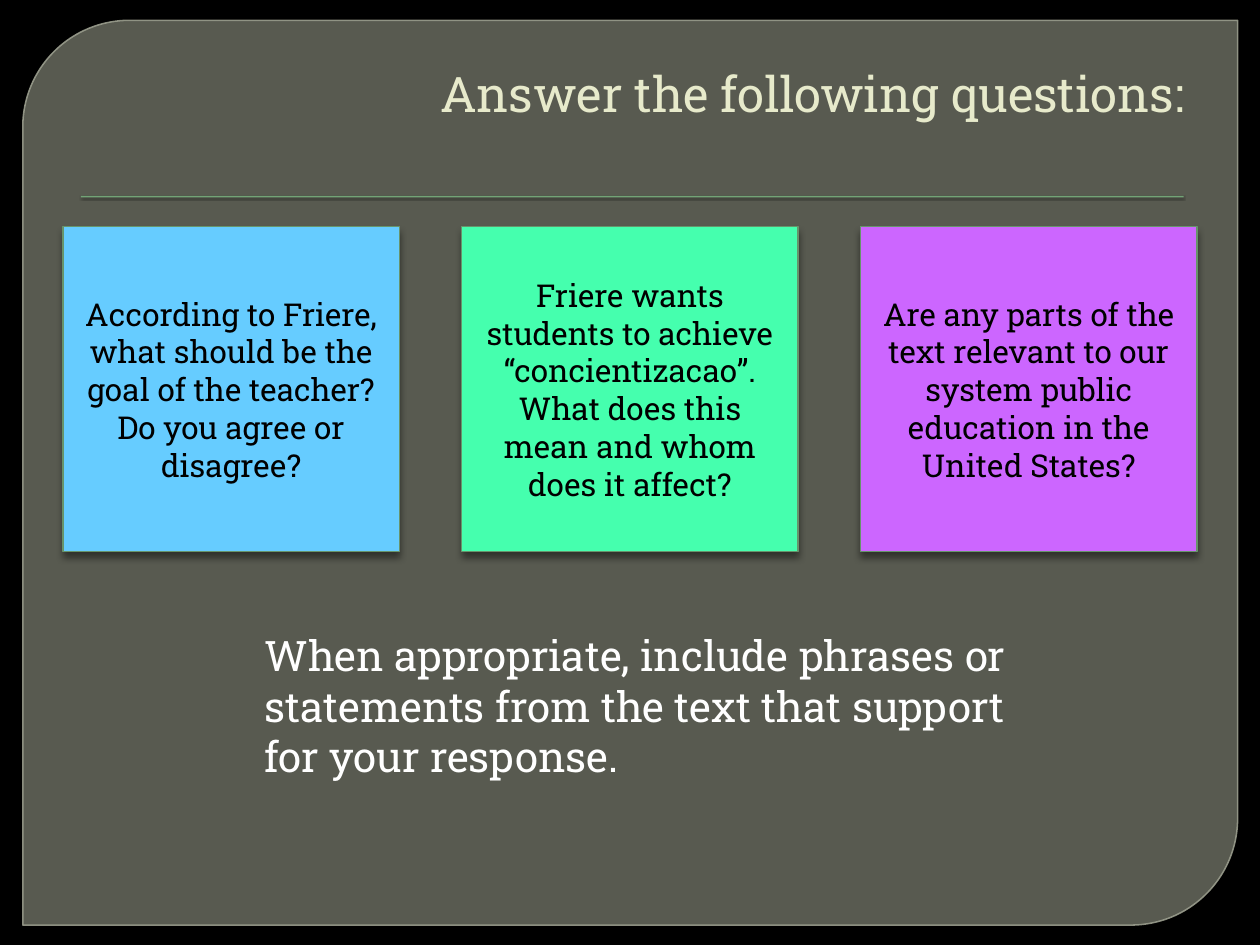
from dataclasses import dataclass
from typing import Optional

from lxml.etree import SubElement
from pptx import Presentation
from pptx.dml.color import RGBColor
from pptx.enum.shapes import MSO_SHAPE as Preset
from pptx.enum.text import MSO_ANCHOR as Anchor, PP_ALIGN as Align
from pptx.oxml.ns import qn
from pptx.util import Cm, Pt

FONT = "Roboto Slab"
CARD_LEFT, CARD_STEP = 1.27, 8.04


@dataclass
class Shadow:
    alpha: int
    blur: float
    distance: float


@dataclass
class Card:
    question: str
    fill: str


CARD_SHADOW = Shadow(43, 4, 3)
CARDS = [
    Card("According to Friere, what should be the goal of the teacher? "
         "Do you agree or disagree?", "66CCFF"),
    Card("Friere wants students to achieve “concientizacao”. "
         "What does this mean and whom does it affect?", "45FFAE"),
    Card("Are any parts of the text relevant to our system public "
         "education in the United States?", "CC66FF"),
]


def color(value: str) -> RGBColor:
    return RGBColor.from_string(value)


def set_values(target, values: dict) -> None:
    for name, value in values.items():
        setattr(target, name, value)


def set_alpha(holder, percent: int) -> None:
    for shade in holder.iter(qn("a:srgbClr")):
        SubElement(shade, qn("a:alpha"), val=str(percent * 1000))


def add_shadow(shape, shadow: Shadow) -> None:
    effects = shape.element.spPr.find(qn("a:effectLst"))
    outer = SubElement(effects, qn("a:outerShdw"), blurRad=str(Pt(shadow.blur)),
                       dist=str(Pt(shadow.distance)), dir="5400000",
                       rotWithShape="0")
    SubElement(outer, qn("a:srgbClr"), val="000000")
    set_alpha(outer, shadow.alpha)


def add_panel(page, preset, area: tuple, fill: str, line: Optional[str] = None,
              width: float = 0.75, shadow: Optional[Shadow] = None):
    panel = page.shapes.add_shape(preset, *map(Cm, area))
    panel.shadow.inherit = False
    panel.fill.solid()
    panel.fill.fore_color.rgb = color(fill)
    if line:
        panel.line.color.rgb = color(line)
        panel.line.width = Pt(width)
    else:
        panel.line.fill.background()
    if shadow:
        add_shadow(panel, shadow)
    return panel


def write(box, text: str, size: int, ink: str, align, anchor) -> None:
    frame = box.text_frame
    set_values(frame, {"word_wrap": True, "vertical_anchor": anchor})
    para = frame.paragraphs[0]
    para.alignment = align
    span = para.add_run()
    span.text = text
    set_values(span.font, {"name": FONT, "size": Pt(size), "bold": False})
    span.font.color.rgb = color(ink)


def add_backdrop(page) -> None:
    page.background.fill.solid()
    page.background.fill.fore_color.rgb = color("000000")
    frame = add_panel(page, Preset.ROUND_2_DIAG_RECTANGLE,
                      (0.46, 0.41, 24.49, 18.24), "888B7B", "9DA090", 0.87)
    frame.adjustments[0] = 0.118
    properties = frame.element.spPr
    set_alpha(properties.find(qn("a:solidFill")), 65)
    set_alpha(properties.find(qn("a:ln")), 88)
    add_panel(page, Preset.RECTANGLE, (1.63, 3.95, 22.23, 0.03), "72A376",
              shadow=Shadow(75, 1, 1))


def add_title(page) -> None:
    title = page.shapes.title
    set_values(title, {"left": Cm(1.27), "top": Cm(0.56),
                       "width": Cm(22.86), "height": Cm(3.18)})
    title.text_frame.margin_bottom = Cm(1.27)
    write(title, "Answer the following questions:", 28, "E7EACB",
          Align.RIGHT, Anchor.BOTTOM)
    page.shapes.element.append(title.element)


def add_card(page, index: int, card: Card) -> None:
    area = (CARD_LEFT + index * CARD_STEP, 4.57, 6.78, 6.55)
    panel = add_panel(page, Preset.RECTANGLE, area, card.fill, "67946B",
                      shadow=CARD_SHADOW)
    write(panel, card.question, 18, "000000", Align.CENTER, Anchor.MIDDLE)


def add_instruction(page) -> None:
    box = page.shapes.add_textbox(Cm(5.08), Cm(12.57), Cm(16.51), Cm(3.33))
    write(box, "When appropriate, include phrases or statements from the text "
          "that support for your response.", 24, "FFFFFF", Align.LEFT, Anchor.TOP)


def main() -> None:
    deck = Presentation()
    set_values(deck, {"slide_width": Cm(25.4), "slide_height": Cm(19.05)})
    page = deck.slides.add_slide(deck.slide_layouts.get_by_name("Title Only"))
    add_backdrop(page)
    add_title(page)
    for index, card in enumerate(CARDS):
        add_card(page, index, card)
    add_instruction(page)
    deck.save("out.pptx")


if __name__ == "__main__":
    main()
